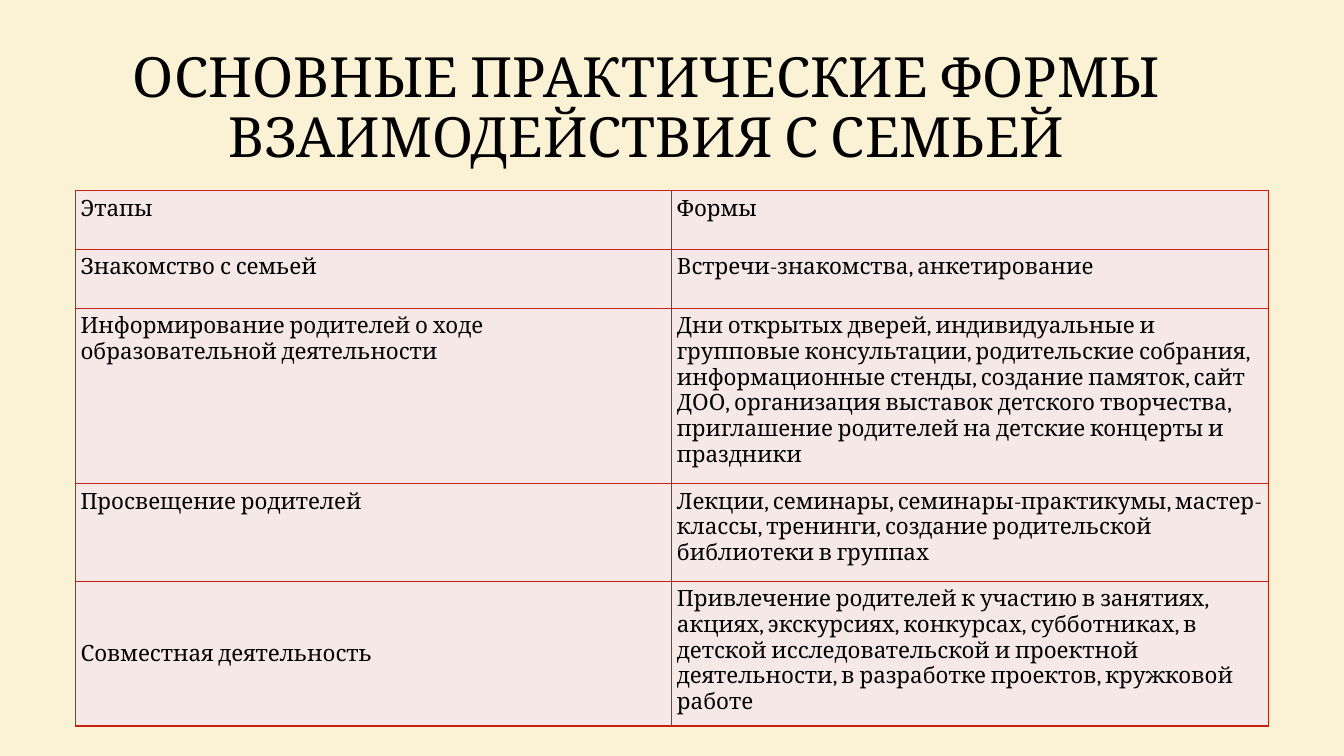
"""Build a slide with a table of the forms of work with families."""
import pptx
import pptx.dml.color
import pptx.enum.text
import pptx.util
import lxml.etree

Cm = pptx.util.Cm
FONT = "Cambria"
BLACK, BORDER, CELL, PAPER = "000000", "C4220D", "F5E8E7", "FBF2D6"
NS = "http://schemas.openxmlformats.org/drawingml/2006/main"


def rgb(value):
    return pptx.dml.color.RGBColor.from_string(value)


def style(p, size):
    p.font.name = FONT
    p.font.size = pptx.util.Pt(size)
    p.font.color.rgb = rgb(BLACK)


prs = pptx.Presentation()
prs.slide_width, prs.slide_height = Cm(33.87), Cm(19.05)
s = prs.slides.add_slide(prs.slide_layouts[6])
s.background.fill.solid()
s.background.fill.fore_color.rgb = rgb(PAPER)

title = s.shapes.add_textbox(0, Cm(0.97), Cm(32.59), Cm(3.58))
tf = title.text_frame
tf.word_wrap = True
tf.vertical_anchor = pptx.enum.text.MSO_ANCHOR.MIDDLE
p = tf.paragraphs[0]
p.text = "ОСНОВНЫЕ ПРАКТИЧЕСКИЕ ФОРМЫ ВЗАИМОДЕЙСТВИЯ С СЕМЬЕЙ"
p.alignment = pptx.enum.text.PP_ALIGN.CENTER
p.line_spacing = 0.9
style(p, 39.6)

rows = [
    (1.48, "Этапы", "Формы"),
    (1.48, "Знакомство с семьей", "Встречи-знакомства, анкетирование"),
    (4.42, "Информирование родителей о ходе образовательной деятельности",
     "Дни открытых дверей, индивидуальные и групповые консультации, "
     "родительские собрания, информационные стенды, создание памяток, "
     "сайт ДОО, организация выставок детского творчества, приглашение "
     "родителей на детские концерты и праздники"),
    (2.46, "Просвещение родителей",
     "Лекции, семинары, семинары-практикумы, мастер-классы, тренинги, "
     "создание родительской библиотеки в группах"),
    (3.43, "Совместная деятельность",
     "Привлечение родителей к участию в занятиях, акциях, экскурсиях, "
     "конкурсах, субботниках, в детской исследовательской и проектной "
     "деятельности, в разработке проектов, кружковой работе"),
]
height = sum(row[0] for row in rows)
table = s.shapes.add_table(len(rows), 2, Cm(1.9), Cm(4.81), Cm(30.06), Cm(height)).table
table.first_row = table.horz_banding = False

for i, (row_height, *texts) in enumerate(rows):
    table.rows[i].height = Cm(row_height)
    for j, text in enumerate(texts):
        cell = table.cell(i, j)
        cell.margin_left = cell.margin_right = Cm(0.13)
        cell.margin_top = cell.margin_bottom = Cm(0.13)
        tc_pr = cell._tc.get_or_add_tcPr()
        for side in ("lnL", "lnR", "lnT", "lnB"):
            ln = lxml.etree.SubElement(tc_pr, f"{{{NS}}}{side}", w=str(pptx.util.Pt(1)))
            fill = lxml.etree.SubElement(ln, f"{{{NS}}}solidFill")
            lxml.etree.SubElement(fill, f"{{{NS}}}srgbClr", val=BORDER)
        cell.fill.solid()
        cell.fill.fore_color.rgb = rgb(CELL)
        p = cell.text_frame.paragraphs[0]
        p.text = text
        style(p, 16)

table.cell(len(rows) - 1, 0).vertical_anchor = pptx.enum.text.MSO_ANCHOR.MIDDLE

prs.save("out.pptx")
